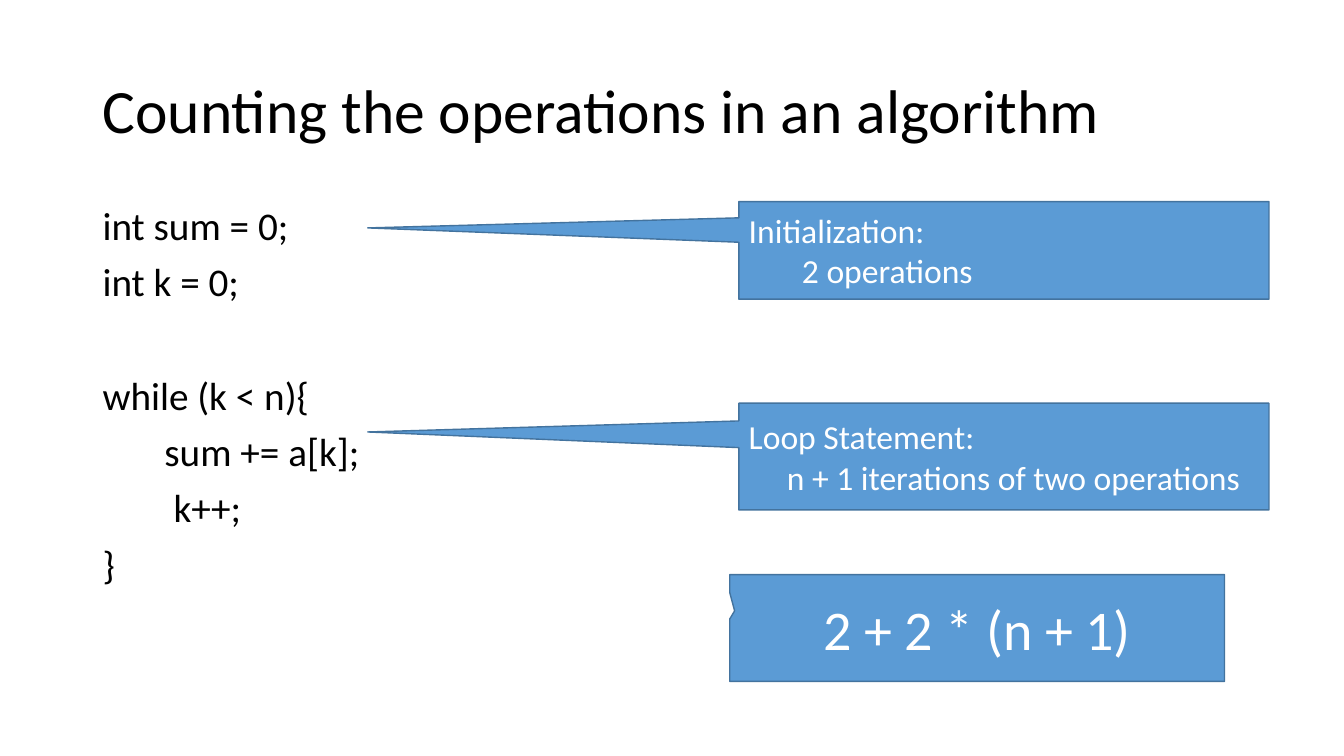
from dataclasses import dataclass

from lxml.etree import SubElement
from pptx import Presentation
from pptx.dml.color import RGBColor
from pptx.enum.shapes import MSO_SHAPE as Shape
from pptx.enum.text import MSO_ANCHOR as Anchor, MSO_AUTO_SIZE as AutoSize, PP_ALIGN as Align
from pptx.oxml.ns import qn
from pptx.util import Cm, Pt


@dataclass(frozen=True)
class Theme:
    font: str = "Calibri"
    text: RGBColor = RGBColor(0, 0, 0)
    callout_text: RGBColor = RGBColor(255, 255, 255)
    callout_fill: RGBColor = RGBColor(0x5B, 0x9B, 0xD5)
    callout_line: RGBColor = RGBColor(0x43, 0x73, 0x9E)
    title_size: Pt = Pt(44)
    code_size: Pt = Pt(28)
    callout_size: Pt = Pt(24)
    total_size: Pt = Pt(40)


THEME = Theme()
LINE_GAP = Pt(10)
BLOCK_GAP = Pt(50.7)  # one empty code line plus the usual gap

# text, indent in cm, space before
CODE = [
    ("int sum = 0;", 0, LINE_GAP),
    ("int k = 0;", 0, LINE_GAP),
    ("while (k < n){", 0, BLOCK_GAP),
    ("sum += a[k];", 1.56, LINE_GAP),
    ("k++;", 1.79, LINE_GAP),
    ("}", 0, LINE_GAP),
]


def place(box, left, top, width, height):
    box.left, box.top, box.width, box.height = Cm(left), Cm(top), Cm(width), Cm(height)


def write_lines(frame, lines, size, color, align=Align.LEFT):
    """Write (text, indent in cm) pairs as unbulleted paragraphs and return them."""
    frame.word_wrap = True
    frame.auto_size = AutoSize.NONE
    for number, (text, indent) in enumerate(lines):
        para = frame.add_paragraph() if number else frame.paragraphs[0]
        para.text = text
        para.alignment = align
        para.font.name = THEME.font
        para.font.size = size
        para.font.color.rgb = color
        properties = para._p.get_or_add_pPr()
        properties.set("marL", str(Cm(indent)))
        properties.set("indent", "0")
    return frame.paragraphs


def add_title(page, text):
    title = page.shapes.title
    place(title, 2.33, 1.01, 29.21, 3.68)
    title.text_frame.vertical_anchor = Anchor.MIDDLE
    para, = write_lines(title.text_frame, [(text, 0)], THEME.title_size, THEME.text)
    para.line_spacing = 0.9


def add_code(page, code):
    body = page.placeholders[1]
    place(body, 2.33, 5.08, 9.37, 12.09)
    lines = [(text, indent) for text, indent, _ in code]
    paragraphs = write_lines(body.text_frame, lines, THEME.code_size, THEME.text)
    for para, (_, _, gap) in zip(paragraphs, code):
        para.line_spacing = 0.9
        para.space_before = gap
        SubElement(para._p.pPr, qn("a:buNone"))


def add_callout(page, bounds, tip, lines, size=THEME.callout_size, align=Align.LEFT):
    """Add a callout whose tip is an offset from its centre, in widths and heights."""
    callout = page.shapes.add_shape(Shape.RECTANGULAR_CALLOUT, 0, 0, 0, 0)
    place(callout, *bounds)
    callout.adjustments[0], callout.adjustments[1] = tip
    callout.shadow.inherit = False
    callout.fill.solid()
    callout.fill.fore_color.rgb = THEME.callout_fill
    callout.line.color.rgb = THEME.callout_line
    callout.line.width = Pt(1)
    callout.text_frame.vertical_anchor = Anchor.MIDDLE
    write_lines(callout.text_frame, lines, size, THEME.callout_text, align)


def main():
    deck = Presentation()
    deck.slide_width, deck.slide_height = Cm(33.87), Cm(19.05)
    page = deck.slides.add_slide(deck.slide_layouts[1])

    add_title(page, "Counting the operations in an algorithm")
    add_code(page, CODE)

    code_tip = (-1.2, -0.23)
    add_callout(page, (18.62, 5.08, 13.36, 2.46), code_tip,
                [("Initialization:", 0), ("2 operations", 1.34)])
    add_callout(page, (18.62, 10.16, 13.36, 2.69), code_tip,
                [("Loop Statement:", 0), ("n + 1 iterations of two operations", 0.96)])
    add_callout(page, (18.39, 14.48, 12.47, 2.69), (-0.49, -0.16),
                [("2 + 2 * (n + 1)", 0)], THEME.total_size, Align.CENTER)

    deck.save("out.pptx")


if __name__ == "__main__":
    main()
